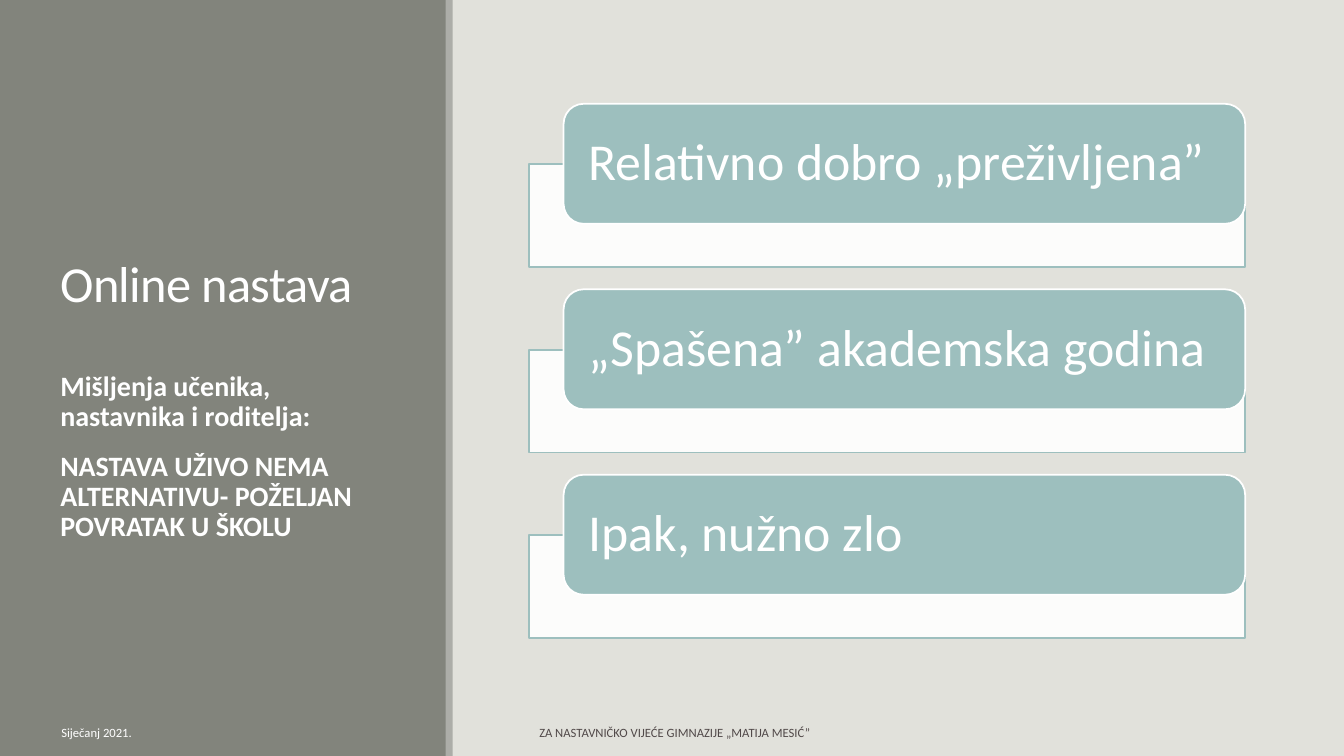
import pptx
import pptx.dml.color
import pptx.enum.shapes
import pptx.enum.text
import pptx.oxml.ns
import pptx.util
from lxml import etree
from pptx.util import Inches

COLORS = {
    "background": "E1E1DB",
    "sidebar": "82847C",
    "divider": "ACADA8",
    "accent": "9DBFBE",
    "white": "FFFFFF",
    "footer": "514949",
}
FONT = "Calibri"
SHAPES = pptx.enum.shapes.MSO_SHAPE
ANCHOR = pptx.enum.text.MSO_ANCHOR
ALIGN = pptx.enum.text.PP_ALIGN


def rgb(name):
    """Return the named palette colour."""
    return pptx.dml.color.RGBColor.from_string(COLORS[name])


def style(paragraph, size, color, bold=False, line_spacing=None):
    """Format a left-aligned paragraph."""
    paragraph.alignment = ALIGN.LEFT
    paragraph.line_spacing = line_spacing
    paragraph.font.name = FONT
    paragraph.font.size = pptx.util.Pt(size)
    paragraph.font.bold = bold
    paragraph.font.color.rgb = rgb(color)


def add_block(slide, kind, left, top, width, height, fill, line=None):
    """Add a filled shape with an optional outline."""
    block = slide.shapes.add_shape(
        kind, Inches(left), Inches(top), Inches(width), Inches(height))
    block.shadow.inherit = False
    block.fill.solid()
    block.fill.fore_color.rgb = rgb(fill)
    if line:
        block.line.color.rgb = rgb(line)
        block.line.width = pptx.util.Pt(1.25)
    else:
        block.line.fill.background()
    return block


def add_text_frame(slide, left, top, width, height, anchor):
    """Add a wrapping text box and return its text frame."""
    box = slide.shapes.add_textbox(
        Inches(left), Inches(top), Inches(width), Inches(height))
    frame = box.text_frame
    frame.word_wrap = True
    frame.vertical_anchor = anchor
    return frame


def add_title(slide, left, top, width, height, text):
    """Place and format the title placeholder in front of earlier shapes."""
    title = slide.shapes.title
    slide.shapes._spTree.append(title._element)
    title.left, title.top = Inches(left), Inches(top)
    title.width, title.height = Inches(width), Inches(height)
    frame = title.text_frame
    frame.text = text
    frame.auto_size = pptx.enum.text.MSO_AUTO_SIZE.NONE
    frame.vertical_anchor = ANCHOR.BOTTOM
    heading = frame.paragraphs[0]
    style(heading, 36, "white", line_spacing=0.85)
    heading.runs[0].font._element.set("spc", "-50")


def add_sidebar(slide, left, top, width, height):
    """Draw the side panel with its title and opinions."""
    add_block(slide, SHAPES.RECTANGLE, left, top, width, height, "sidebar")
    add_block(slide, SHAPES.RECTANGLE, left + width - 0.01, top, 0.07, height, "divider")
    add_title(slide, left + 0.5, top + 0.65, 3.5, 2.5, "Online nastava")

    opinions = add_text_frame(slide, left + 0.5, top + 3.64, 3.5, 3.26, ANCHOR.TOP)
    opinions.text = ("Mišljenja učenika, nastavnika i roditelja:\n"
                     "NASTAVA UŽIVO NEMA ALTERNATIVU- POŽELJAN POVRATAK U ŠKOLU")
    for index, opinion in enumerate(opinions.paragraphs):
        style(opinion, 20, "white", bold=True, line_spacing=0.9)
        opinion.space_before = pptx.util.Pt(12 if index else 0)
        opinion.space_after = pptx.util.Pt(2)


def add_card(slide, left, top, width, text):
    """Draw a pale panel with a rounded label overlapping its top."""
    panel = add_block(
        slide, SHAPES.RECTANGLE, left, top + 0.6, width, 1.02, "white", "accent")
    panel_color = panel.fill._xPr.find(".//" + pptx.oxml.ns.qn("a:srgbClr"))
    etree.SubElement(panel_color, pptx.oxml.ns.qn("a:alpha"), val="90000")

    label = add_block(slide, SHAPES.ROUNDED_RECTANGLE, left + 0.34, top,
                      width - 0.34, 1.19, "accent", "white")
    frame = label.text_frame
    frame.text = text
    frame.word_wrap = True
    frame.vertical_anchor = ANCHOR.MIDDLE
    frame.margin_left = frame.margin_right = Inches(0.19)
    frame.margin_top = frame.margin_bottom = 0
    style(frame.paragraphs[0], 37, "white", line_spacing=0.9)


def add_cards(slide, left, top, width, pitch):
    """Stack the conclusion cards at an equal pitch."""
    conclusions = ("Relativno dobro „preživljena”",
                   "„Spašena” akademska godina",
                   "Ipak, nužno zlo")
    for index, conclusion in enumerate(conclusions):
        add_card(slide, left, top + index * pitch, width, conclusion)


def add_footer(slide, top, height):
    """Write the date and the audience along the bottom edge."""
    for left, width, text, color in (
            (0.51, 2.86, "Siječanj 2021.", "white"),
            (5.25, 5.08, "ZA NASTAVNIČKO VIJEĆE GIMNAZIJE „MATIJA MESIĆ”", "footer")):
        frame = add_text_frame(slide, left, top, width, height, ANCHOR.MIDDLE)
        frame.text = text
        style(frame.paragraphs[0], 9, color)


def main():
    """Build and save the presentation."""
    presentation = pptx.Presentation()
    presentation.slide_width = Inches(13.33)
    presentation.slide_height = Inches(7.5)
    slide = presentation.slides.add_slide(presentation.slide_layouts[5])
    slide.background.fill.solid()
    slide.background.fill.fore_color.rgb = rgb("background")
    add_sidebar(slide, 0, 0, 4.43, 7.5)
    add_cards(slide, 5.25, 1.03, 7.1, 1.84)
    add_footer(slide, 7.07, 0.4)
    presentation.save("out.pptx")


if __name__ == "__main__":
    main()
